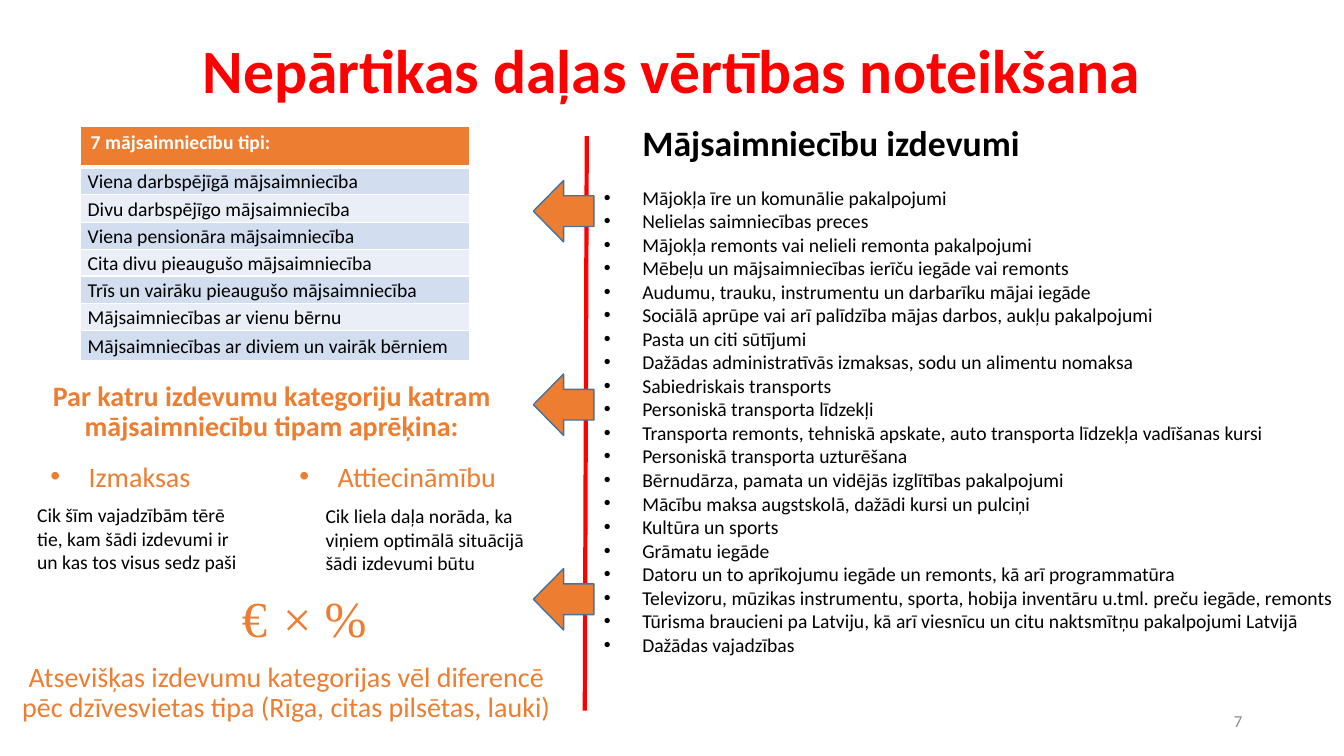
from lxml import etree
from pptx import Presentation
from pptx.dml.color import RGBColor
from pptx.enum import shapes, text
from pptx.oxml import ns
from pptx.util import Inches, Pt

# Content
TITLE = "Nepārtikas daļas vērtības noteikšana"
HOUSEHOLDS_HEADER = "7 mājsaimniecību tipi:"
HOUSEHOLDS = [
    "Viena darbspējīgā mājsaimniecība",
    "Divu darbspējīgo mājsaimniecība",
    "Viena pensionāra mājsaimniecība",
    "Cita divu pieaugušo mājsaimniecība",
    "Trīs un vairāku pieaugušo mājsaimniecība",
    "Mājsaimniecības ar vienu bērnu",
    "Mājsaimniecības ar diviem un vairāk bērniem",
]
ROW_HEIGHTS = [0.41, 0.27, 0.28, 0.27, 0.26, 0.27, 0.27, 0.3]
EXPENSES = [
    "Mājokļa īre un komunālie pakalpojumi",
    "Nelielas saimniecības preces",
    "Mājokļa remonts vai nelieli remonta pakalpojumi",
    "Mēbeļu un mājsaimniecības ierīču iegāde vai remonts",
    "Audumu, trauku, instrumentu un darbarīku mājai iegāde",
    "Sociālā aprūpe vai arī palīdzība mājas darbos, aukļu pakalpojumi",
    "Pasta un citi sūtījumi",
    "Dažādas administratīvās izmaksas, sodu un alimentu nomaksa",
    "Sabiedriskais transports",
    "Personiskā transporta līdzekļi",
    "Transporta remonts, tehniskā apskate, auto transporta līdzekļa vadīšanas kursi",
    "Personiskā transporta uzturēšana",
    "Bērnudārza, pamata un vidējās izglītības pakalpojumi",
    "Mācību maksa augstskolā, dažādi kursi un pulciņi",
    "Kultūra un sports",
    "Grāmatu iegāde",
    "Datoru un to aprīkojumu iegāde un remonts, kā arī programmatūra",
    "Televizoru, mūzikas instrumentu, sporta, hobija inventāru u.tml. preču iegāde, remonts",
    "Tūrisma braucieni pa Latviju, kā arī viesnīcu un citu naktsmītņu pakalpojumi Latvijā",
    "Dažādas vajadzības",
]

RED, ORANGE, BLACK, WHITE, GREY = "FF0000", "ED7D31", "000000", "FFFFFF", "8C8C8C"
BANDS = ["D2DEEF", "EAEFF7"]
CENTER, RIGHT = text.PP_ALIGN.CENTER, text.PP_ALIGN.RIGHT

# Text formats: font values, then paragraph values
SMALL = {"size": 14, "color": BLACK}
ACCENT = {"size": 20, "color": ORANGE}
CENTERED = {"alignment": CENTER, "line_spacing": 0.9}
SYMBOL = {"size": 36, "color": ORANGE, "name": "Times New Roman"}

# Text boxes: words, place, font, paragraph, middle anchor, bullet
TEXTS = [
    ("7", (9.42, 6.95, 3, 0.4), {"size": 12, "color": GREY}, {"alignment": RIGHT}, True, False),
    ("Mājsaimniecību izdevumi", (6.26, 1.09, 3.97, 0.72),
     {"size": 25.5, "color": BLACK, "bold": True},
     {"alignment": CENTER, "line_spacing": 0.8}, True, False),
    ("Par katru izdevumu kategoriju katram mājsaimniecību tipam aprēķina:",
     (0.22, 3.73, 4.95, 0.72), {**ACCENT, "bold": True}, CENTERED, True, False),
    ("Izmaksas", (0.4, 4.51, 1.91, 0.44), ACCENT, {}, False, True),
    ("Attiecināmību", (2.87, 4.51, 2.5, 0.44), ACCENT, {}, False, True),
    ("Cik šīm vajadzībām tērē tie, kam šādi izdevumi ir un kas tos visus sedz paši",
     (0.27, 4.94, 2.25, 0.81), SMALL, {}, False, False),
    ("Cik liela daļa norāda, ka viņiem optimālā situācijā šādi izdevumi būtu",
     (3.13, 4.95, 2.25, 0.81), SMALL, {}, False, False),
    ("Atsevišķas izdevumu kategorijas vēl diferencē pēc dzīvesvietas tipa "
     "(Rīga, citas pilsētas, lauki)",
     (0.02, 6.52, 5.64, 0.72), ACCENT, CENTERED, True, False),
]
TEXTS += [(symbol, (2.3 + 0.41 * i, 5.78, 0.41, 0.71), SYMBOL, {}, False, False)
          for i, symbol in enumerate("€×%")]


def rgb(value):
    return RGBColor.from_string(value)


def place(shape, at):
    for name, value in zip(("left", "top", "width", "height"), at):
        setattr(shape, name, Inches(value))


def write(para, words, font, layout=None, bullet=False):
    span = para.add_run()
    span.text = words
    values = {"name": "Calibri", "bold": False, **font}
    span.font.color.rgb = rgb(values.pop("color"))
    values["size"] = Pt(values["size"])
    for name, value in values.items():
        setattr(span.font, name, value)
    for name, value in {"space_before": Pt(0), **(layout or {})}.items():
        setattr(para, name, value)
    if bullet:
        props = para._p.get_or_add_pPr()
        props.set("marL", str(Inches(0.38)))
        props.set("indent", str(-Inches(0.38)))
        etree.SubElement(props, ns.qn("a:buFont"), typeface="Arial")
        etree.SubElement(props, ns.qn("a:buChar"), char="•")


def add_borders(cell, widths):
    props = cell._tc.get_or_add_tcPr()
    for side, width in zip("LRTB", widths):
        line = etree.SubElement(props, ns.qn(f"a:ln{side}"), w=str(Pt(width)))
        fill = etree.SubElement(line, ns.qn("a:solidFill"))
        etree.SubElement(fill, ns.qn("a:srgbClr"), val=WHITE)


deck = Presentation()
deck.slide_width, deck.slide_height = Inches(13.33), Inches(7.5)
page = deck.slides.add_slide(deck.slide_layouts[1])

# Title and list of expenses
title, body = page.placeholders
place(title, (0.92, 0, 11.5, 1.45))
title.text_frame.vertical_anchor = text.MSO_ANCHOR.MIDDLE
write(title.text_frame.paragraphs[0], TITLE,
      {"size": 44, "color": RED, "bold": True}, CENTERED)

place(body, (5.89, 1.79, 7.44, 4.81))
body.text_frame.auto_size = text.MSO_AUTO_SIZE.NONE
for i, expense in enumerate(EXPENSES):
    para = body.text_frame.add_paragraph() if i else body.text_frame.paragraphs[0]
    write(para, expense, SMALL, bullet=True)

# Red divider
divider = page.shapes.add_connector(
    shapes.MSO_CONNECTOR.STRAIGHT, Inches(5.82), Inches(1.35), Inches(5.8), Inches(7.05))
divider.line.color.rgb = rgb(RED)
divider.line.width = Pt(3)
etree.SubElement(divider._element.spPr, ns.qn("a:effectLst"))

# Household types table
table = page.shapes.add_table(len(ROW_HEIGHTS), 1, Inches(0.8), Inches(1.25),
                              Inches(3.86), Inches(sum(ROW_HEIGHTS))).table
for i, words in enumerate([HOUSEHOLDS_HEADER] + HOUSEHOLDS):
    table.rows[i].height = Inches(ROW_HEIGHTS[i])
    cell = table.cell(i, 0)
    add_borders(cell, (1, 1, 3 if i == 1 else 1, 1 if i else 3))
    cell.fill.solid()
    cell.fill.fore_color.rgb = rgb(BANDS[(i - 1) % 2] if i else ORANGE)
    para = cell.text_frame.paragraphs[0]
    if i == 0:
        write(para, words, {"size": 14, "color": WHITE, "bold": True})
        continue
    cell.vertical_anchor = text.MSO_ANCHOR.MIDDLE
    for side, inset in {"left": 0.07, "right": 0.07, "top": 0, "bottom": 0}.items():
        setattr(cell, f"margin_{side}", Inches(inset))
    write(para, words, SMALL, {"line_spacing": 1.07})

# Text boxes
for words, at, font, layout, middle, bullet in TEXTS:
    box = page.shapes.add_textbox(*map(Inches, at))
    box.text_frame.word_wrap = True
    if middle:
        box.text_frame.vertical_anchor = text.MSO_ANCHOR.MIDDLE
    write(box.text_frame.paragraphs[0], words, font, layout, bullet)

# Arrows from the expenses to the calculation steps
for top in (1.79, 3.71, 5.64):
    arrow = page.shapes.add_shape(shapes.MSO_SHAPE.LEFT_ARROW, Inches(5.29), Inches(top),
                                  Inches(0.6), Inches(0.61))
    arrow.shadow.inherit = False
    arrow.fill.solid()
    arrow.fill.fore_color.rgb = rgb(ORANGE)
    arrow.line.color.rgb = rgb("43739E")
    arrow.line.width = Pt(1)

deck.save("out.pptx")
